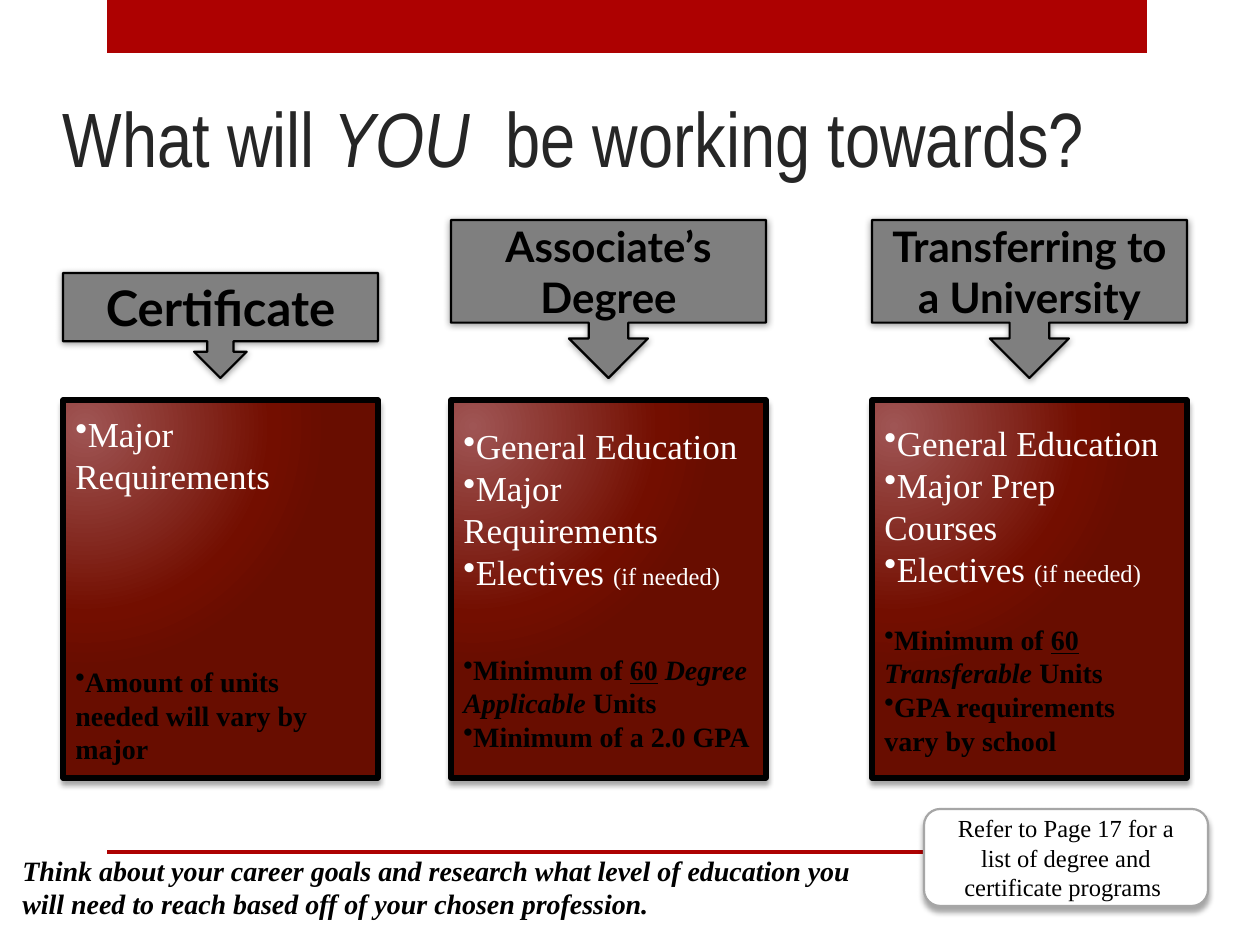
from lxml import etree
from pptx import Presentation
from pptx.dml.color import RGBColor
from pptx.enum.shapes import MSO_SHAPE
from pptx.enum.text import MSO_ANCHOR, MSO_AUTO_SIZE, PP_ALIGN
from pptx.oxml import parse_xml
from pptx.oxml.ns import nsdecls, qn
from pptx.util import Emu, Pt

RECTANGLE = MSO_SHAPE.RECTANGLE
ROUNDED = MSO_SHAPE.ROUNDED_RECTANGLE
CALLOUT = MSO_SHAPE.DOWN_ARROW_CALLOUT
TOP, MIDDLE, BOTTOM = MSO_ANCHOR.TOP, MSO_ANCHOR.MIDDLE, MSO_ANCHOR.BOTTOM
LEFT, CENTER = PP_ALIGN.LEFT, PP_ALIGN.CENTER
NO_AUTOFIT = MSO_AUTO_SIZE.NONE

SCALE = 914400 / 126
SERIF = "Times New Roman"
RED, BLACK, WHITE = "AD0101", "000000", "FFFFFF"
PANEL_GRADIENT = [(0, "9F5554"), (76, "730E00"), (100, "680D00")]
PANEL_SHADOW = (35, 3, 3, 90)
CALLOUT_SHADOW = (40, 4, 1, 88)
COLUMN_WIDTH, PANEL_TOP, PANEL_HEIGHT, CALLOUT_BOTTOM = 315, 400, 378, 378

ELECTIVES = [("Electives ", {}), ("(if needed)", {"size": 14})]
COLUMNS = [
    {"left": 63, "callout": ("Certificate", 28, 105, "808080"), "gap": 96,
     "courses": [[("Major Requirements", {})]],
     "rules": [[("Amount of units needed will vary by major", {})]]},
    {"left": 451, "callout": ("Associate’s Degree", 24, 158, "7F7F7F"), "gap": 34,
     "courses": [[("General Education", {})], [("Major Requirements", {})], ELECTIVES],
     "rules": [[("Minimum of ", {}), ("60", {"underline": True}), (" ", {}),
                ("Degree Applicable ", {"italic": True}), ("Units", {})],
               [("Minimum of a 2.0 GPA", {})]]},
    {"left": 872, "callout": ("Transferring to a University", 24, 158, "7F7F7F"), "gap": 19,
     "courses": [[("General Education", {})], [("Major Prep  Courses", {})], ELECTIVES],
     "rules": [[("Minimum of ", {}), ("60", {"underline": True}), (" ", {}),
                ("Transferable ", {"italic": True}), ("Units", {})],
               [("GPA requirements vary by school", {})]]},
]


def px(length):
    return Emu(round(length * SCALE))


def color(value):
    return RGBColor.from_string(value)


def add_box(slide, kind, bounds, fill, line=None, line_width=0, shadow=None):
    shape = slide.shapes.add_shape(kind, *map(px, bounds))
    shape.fill.solid()
    shape.fill.fore_color.rgb = color(fill)
    if line:
        shape.line.color.rgb = color(line)
        shape.line.width = Pt(line_width)
    else:
        shape.line.fill.background()
    shape.shadow.inherit = False
    if shadow:
        add_shadow(shape, *shadow)
    return shape


def add_shadow(shape, opacity, blur, distance, angle):
    effects = shape._element.spPr.find(qn("a:effectLst"))
    effects.append(parse_xml(
        f'<a:outerShdw {nsdecls("a")} blurRad="{Pt(blur)}" dist="{Pt(distance)}" '
        f'dir="{angle * 60000}" rotWithShape="0"><a:srgbClr val="{BLACK}">'
        f'<a:alpha val="{opacity * 1000}"/></a:srgbClr></a:outerShdw>'))


def set_radial_fill(shape, stops):
    stop_xml = "".join(f'<a:gs pos="{position * 1000}"><a:srgbClr val="{value}"/></a:gs>'
                       for position, value in stops)
    gradient = parse_xml(
        f'<a:gradFill {nsdecls("a")} rotWithShape="1"><a:gsLst>{stop_xml}</a:gsLst>'
        '<a:path path="circle"><a:fillToRect l="15000" t="15000" r="100000" b="100000"/>'
        '</a:path></a:gradFill>')
    properties = shape._element.spPr
    properties.replace(properties.find(qn("a:solidFill")), gradient)


def prepare_frame(shape, anchor):
    frame = shape.text_frame
    frame.word_wrap = True
    frame.auto_size = NO_AUTOFIT
    frame.vertical_anchor = anchor
    return frame


def write_paragraph(paragraph, runs, font_name, size, text_color, align=LEFT,
                    bold=False, italic=False, bullet=False, gap=0):
    paragraph.alignment = align
    paragraph.space_before = Pt(gap)
    if bullet:
        properties = paragraph._p.get_or_add_pPr()
        properties.set("marL", "0")
        properties.set("indent", "0")
        etree.SubElement(properties, qn("a:buChar")).set("char", "•")
    font = paragraph.font
    font.name, font.size = font_name, Pt(size)
    font.bold, font.italic = bold, italic
    font.color.rgb = color(text_color)
    for text, style in runs:
        run = paragraph.add_run()
        run.text = text
        if "size" in style:
            run.font.size = Pt(style["size"])
        if "italic" in style:
            run.font.italic = style["italic"]
        if "underline" in style:
            run.font.underline = style["underline"]


def add_title(slide):
    title = slide.shapes.title
    title.left, title.top, title.width, title.height = map(px, (50, 54, 1166, 135))
    runs = [("What will ", {}), ("YOU", {"italic": True}), ("  be working towards?", {})]
    frame = prepare_frame(title, BOTTOM)
    write_paragraph(frame.paragraphs[0], runs, "Arial Narrow", 44, "262626")


def add_panel(slide, column):
    panel = add_box(slide, RECTANGLE, (column["left"], PANEL_TOP, COLUMN_WIDTH, PANEL_HEIGHT),
                    PANEL_GRADIENT[0][1], BLACK, 3, PANEL_SHADOW)
    set_radial_fill(panel, PANEL_GRADIENT)
    frame = prepare_frame(panel, MIDDLE)
    for index, runs in enumerate(column["courses"]):
        paragraph = frame.add_paragraph() if index else frame.paragraphs[0]
        write_paragraph(paragraph, runs, SERIF, 20, WHITE, bullet=True)
    for index, runs in enumerate(column["rules"]):
        write_paragraph(frame.add_paragraph(), runs, SERIF, 16, BLACK, bold=True,
                        bullet=True, gap=0 if index else column["gap"])


def add_callout(slide, column):
    text, size, height, fill = column["callout"]
    bounds = (column["left"], CALLOUT_BOTTOM - height, COLUMN_WIDTH, height)
    callout = add_box(slide, CALLOUT, bounds, fill, BLACK, 1.25, CALLOUT_SHADOW)
    frame = prepare_frame(callout, MIDDLE)
    write_paragraph(frame.paragraphs[0], [(text, {})], "Lato", size, BLACK, CENTER, bold=True)


def add_advice(slide):
    box = slide.shapes.add_textbox(*map(px, (10, 847, 882, 118)))
    text = ("Think about your career goals and research what level of education you "
            "will need to reach based off of your chosen profession.")
    frame = prepare_frame(box, TOP)
    write_paragraph(frame.paragraphs[0], [(text, {})], SERIF, 16, BLACK, bold=True, italic=True)


def add_reference(slide):
    box = add_box(slide, ROUNDED, (924, 809, 284, 97), WHITE, "A6A6A6", 1.25, PANEL_SHADOW)
    text = "Refer to Page 17 for a list of degree and certificate programs "
    frame = prepare_frame(box, MIDDLE)
    write_paragraph(frame.paragraphs[0], [(text, {})], SERIF, 14, BLACK, CENTER)


def main():
    presentation = Presentation()
    presentation.slide_width, presentation.slide_height = px(1260), px(945)
    slide = presentation.slides.add_slide(presentation.slide_layouts[5])
    for top, height in ((0, 53), (850, 4)):
        add_box(slide, RECTANGLE, (107, top, 1040, height), RED)
    add_title(slide)
    for column in COLUMNS:
        add_panel(slide, column)
        add_callout(slide, column)
    add_advice(slide)
    add_reference(slide)
    presentation.save("out.pptx")


if __name__ == "__main__":
    main()
